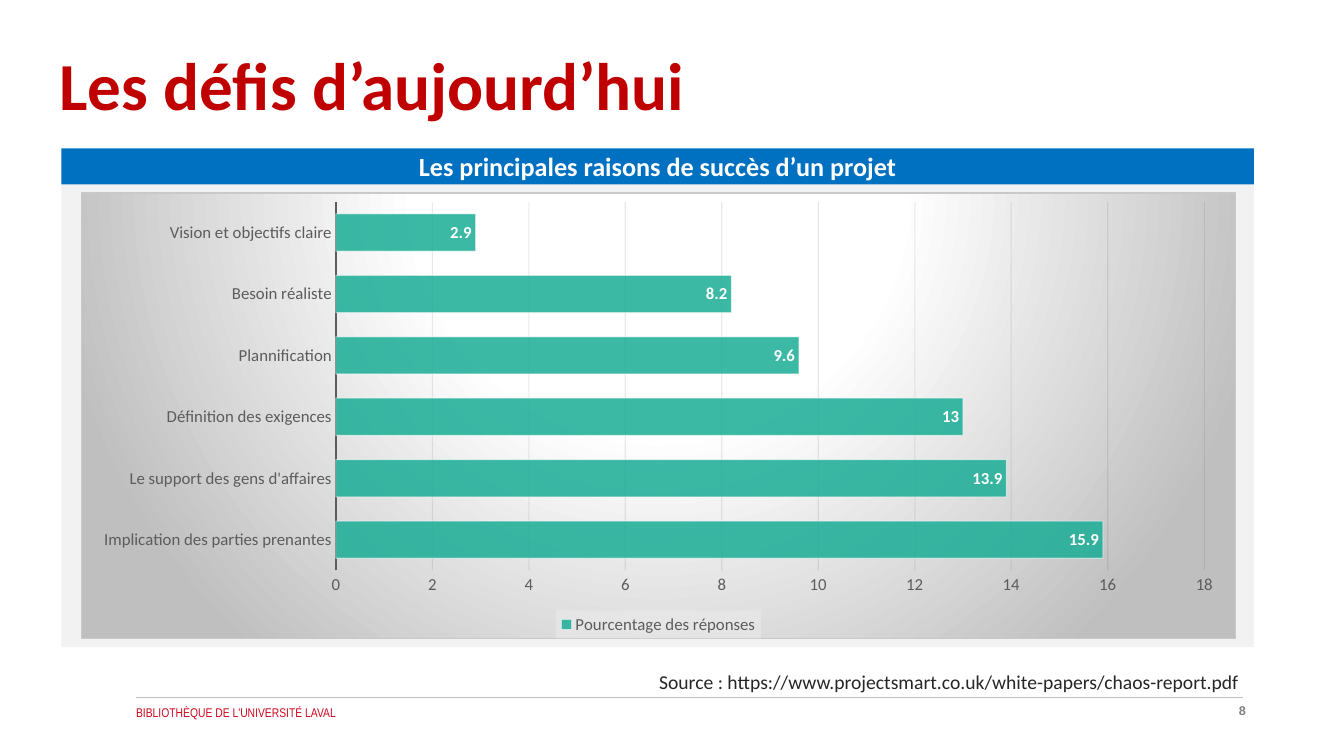
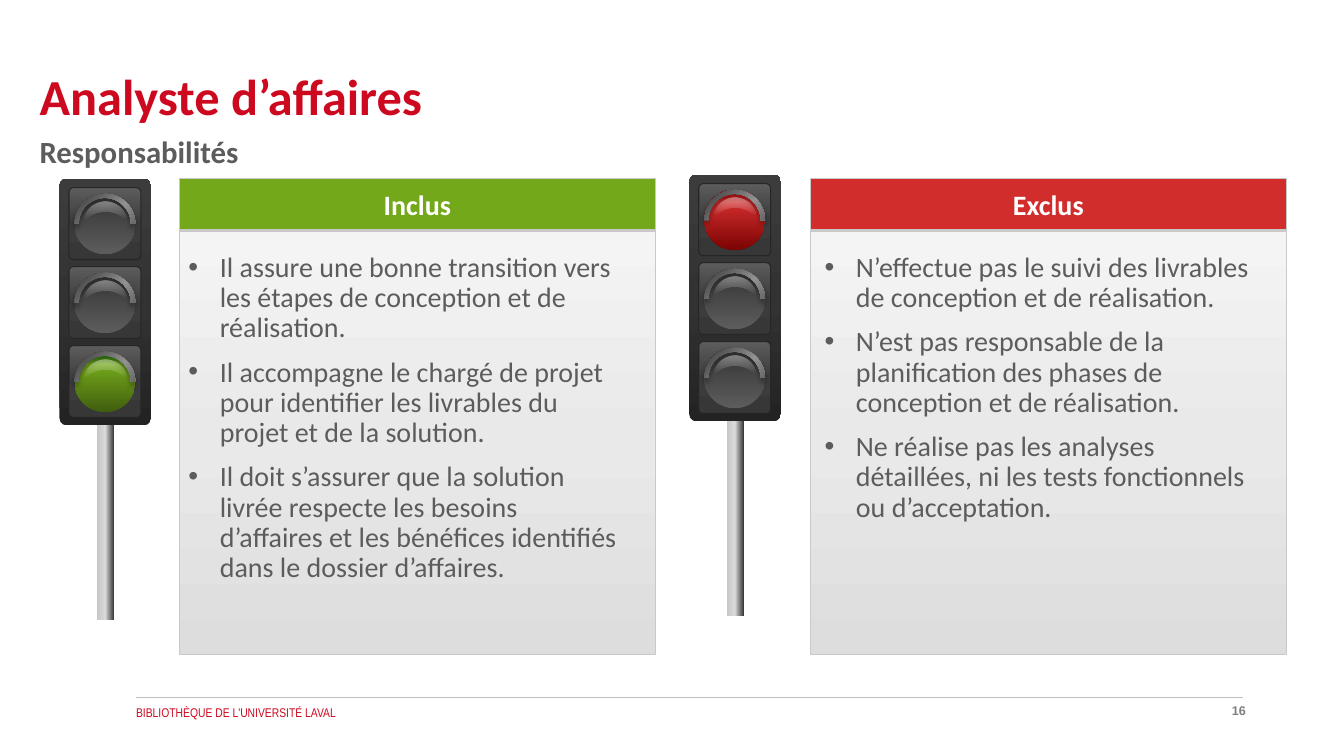
from lxml import etree
from pptx import Presentation
from pptx.chart.data import CategoryChartData
from pptx.dml.color import RGBColor
from pptx.enum.chart import XL_CHART_TYPE as ChartType, XL_LABEL_POSITION as LabelPos
from pptx.enum.chart import XL_LEGEND_POSITION as LegendPos, XL_TICK_MARK as Tick
from pptx.enum.shapes import MSO_CONNECTOR as Connector, MSO_SHAPE as Shape
from pptx.enum.text import MSO_ANCHOR as Anchor, MSO_AUTO_SIZE as AutoSize, PP_ALIGN as Align
from pptx.oxml import parse_xml
from pptx.oxml.ns import nsdecls, qn
from pptx.util import Cm, Pt

COLORS = {
    "crimson": "CD0920", "deep red": "C00000", "red": "D12D2D", "dark red": "7B0303",
    "green": "73A81B", "dark green": "405E0F", "forest": "006600",
    "blue": "0070C0", "teal": "1AAD96", "white": "FFFFFF", "pale": "F2F2F2",
    "ink": "262626", "text": "5C5C5C", "number": "808080", "rule": "BFBFBF",
    "border": "C9C9C9", "grid": "313131", "black": "000000",
    "panel low": "DDDDDD", "panel mid": "E9E9E9", "panel high": "F4F4F4",
    "pole left": "C6C5C5", "pole mid": "DBDADA", "shine": "929292",
    "case low": "232323", "case mid": "323232", "case high": "3C3C3C", "cell": "373737",
}

# Linear gradients: angle, then stops of position, colour and optional opacity
GRADIENTS = {
    "panel": (270, [(0, "panel low"), (50, "panel mid"), (100, "panel high")]),
    "pole": (0, [(0, "pole left"), (50, "pole mid"), (100, "case high")]),
    "case": (270, [(0, "case low"), (50, "case mid"), (100, "case high")]),
    "cell": (270, [(0, "cell"), (50, "case high"), (100, "text")]),
    "off": (270, [(0, "text"), (80, "case high"), (100, "case high")]),
    "red on": (270, [(0, "dark red"), (80, "red"), (100, "deep red")]),
    "green on": (270, [(0, "dark green"), (80, "green"), (100, "forest")]),
    "rim": (45, [(0, "cell"), (50, "shine"), (100, "case high")]),
    "gloss": (0, [(0, "white", 41), (86, "white", 0)]),
}

FOOTER = "BIBLIOTHÈQUE DE L'UNIVERSITÉ LAVAL"

SUCCESS = {
    "title": "Les défis d’aujourd’hui",
    "number": "8",
    "band": "Les principales raisons de succès d’un projet",
    "series": "Pourcentage des réponses",
    "values": [
        ("Implication des parties prenantes", 15.9),
        ("Le support des gens d'affaires", 13.9),
        ("Définition des exigences", 13),
        ("Plannification", 9.6),
        ("Besoin réaliste", 8.2),
        ("Vision et objectifs claire", 2.9),
    ],
    "source": "Source : https://www.projectsmart.co.uk/white-papers/chaos-report.pdf",
}

ANALYST = {
    "title": "Analyste d’affaires",
    "number": "16",
    "subtitle": "Responsabilités",
    "panels": [
        {"heading": "Inclus", "color": "green", "left": 4.52, "holder": 2, "list left": 4.75,
         "light": (1.5, 4.5), "lamps": ["off", "off", "green on"],
         "items": [
             "Il assure une bonne transition vers les étapes de conception et de réalisation.",
             "Il accompagne le chargé de projet pour identifier les livrables du projet "
             "et de la solution.",
             "Il doit s’assurer que la solution livrée respecte les besoins d’affaires et "
             "les bénéfices identifiés dans le dossier d’affaires.",
         ]},
        {"heading": "Exclus", "color": "red", "left": 20.42, "holder": 4, "list left": 20.78,
         "light": (17.37, 4.4), "lamps": ["red on", "off", "off"],
         "items": [
             "N’effectue pas le suivi des livrables de conception et de réalisation.",
             "N’est pas responsable de la planification des phases de conception "
             "et de réalisation.",
             "Ne réalise pas les analyses détaillées, ni les tests fonctionnels "
             "ou d’acceptation.",
         ]},
    ],
}


def rgb(name):
    return RGBColor.from_string(COLORS[name])


def cms(*lengths):
    return [Cm(length) for length in lengths]


def set_all(target, values):
    for name, value in values.items():
        setattr(target, name, value)


def set_font(font, size, color, bold=False, name="Calibri"):
    set_all(font, {"name": name, "size": Pt(size), "bold": bold})
    font.color.rgb = rgb(color)


def write(frame, lines, size, color, bold=False, name="Calibri", para_format=None,
          bullet=False, **frame_format):
    """Fill a text frame with one paragraph a line, all in one format."""
    set_all(frame, {"word_wrap": True, "auto_size": AutoSize.NONE, **frame_format})
    for index, line in enumerate(lines):
        para = frame.add_paragraph() if index else frame.paragraphs[0]
        if bullet:
            props = para._p.get_or_add_pPr()
            props.set("marL", str(Cm(0.79)))
            props.set("indent", str(Cm(-0.79)))
            etree.SubElement(props, qn("a:buFont"), typeface="Arial")
            etree.SubElement(props, qn("a:buChar"), char="•")
        set_all(para, {"space_before": Pt(0), "alignment": Align.LEFT, **(para_format or {})})
        span = para.add_run()
        span.text = line
        set_font(span.font, size, color, bold, name)


def fade(element, percent):
    """Make the colour inside an element partly transparent."""
    for color in element.iter(qn("a:srgbClr")):
        etree.SubElement(color, qn("a:alpha"), val=str(percent * 1000))


def gradient_xml(stops, direction):
    marks = ""
    for position, color, *opacity in stops:
        alpha = "".join(f'<a:alpha val="{value * 1000}"/>' for value in opacity)
        marks += (f'<a:gs pos="{position * 1000}"><a:srgbClr val="{COLORS[color]}">'
                  f'{alpha}</a:srgbClr></a:gs>')
    return (f'<a:gradFill {nsdecls("a")} rotWithShape="1"><a:gsLst>{marks}</a:gsLst>'
            f'{direction}</a:gradFill>')


def draw(shapes, kind, box, fill, line=None, width=0.75):
    """Add a preset shape whose fill is a gradient name or a colour name."""
    shape = shapes.add_shape(kind, *cms(*box))
    shape.shadow.inherit = False
    if fill in GRADIENTS:
        angle, stops = GRADIENTS[fill]
        shape.fill.background()
        props = shape._element.spPr
        direction = f'<a:lin ang="{angle * 60000}" scaled="0"/>'
        props.replace(props.find(qn("a:noFill")), parse_xml(gradient_xml(stops, direction)))
    else:
        shape.fill.solid()
        shape.fill.fore_color.rgb = rgb(fill)
    if line:
        shape.line.color.rgb = rgb(line)
        shape.line.width = Pt(width)
    else:
        shape.line.fill.background()
    return shape


def draw_band(shapes, box, text, size, fill, line=None):
    band = draw(shapes, Shape.RECTANGLE, box, fill, line, 1)
    write(band.text_frame, [text], size, "white", True, vertical_anchor=Anchor.MIDDLE,
          para_format={"alignment": Align.CENTER})


def fill_holder(holder, box, lines, size, color, bold=True, anchor=Anchor.MIDDLE, **options):
    set_all(holder, dict(zip(("left", "top", "width", "height"), cms(*box))))
    margins = {f"margin_{side}": 0 for side in ("left", "top", "right", "bottom")}
    write(holder.text_frame, lines, size, color, bold, vertical_anchor=anchor,
          **margins, **options)


def add_label(page, box, text, *font, **options):
    write(page.shapes.add_textbox(*cms(*box)).text_frame, [text], *font, **options)


def start_page(deck, layout, content, title_at, size, color):
    """Add a slide with its title, footer text, rule and number."""
    page = deck.slides.add_slide(deck.slide_layouts.get_by_name(layout))
    fill_holder(page.shapes.title, (*title_at, 31, 1.83), [content["title"]], size, color)
    add_label(page, (3.18, 17.65, 20.45, 0.64), FOOTER, 9, "crimson", False, "Arial Narrow")
    rule = page.shapes.add_connector(Connector.STRAIGHT, *cms(3.43, 17.58, 31.32, 17.58))
    rule.line.color.rgb = rgb("rule")
    rule.line.width = Pt(0.25)
    etree.SubElement(rule._element.spPr, qn("a:effectLst"))
    add_label(page, (28.12, 17.58, 3.53, 0.64), content["number"], 9, "number", True, "Arial",
              para_format={"alignment": Align.RIGHT})
    return page


def add_bar_chart(page, box, content):
    data = CategoryChartData()
    data.categories, values = zip(*content["values"])
    data.add_series(content["series"], values)
    chart = page.shapes.add_chart(ChartType.BAR_CLUSTERED, *cms(*box), data).chart
    set_font(chart.font, 10, "ink")
    set_all(chart, {"has_title": False, "has_legend": True})
    set_all(chart.legend, {"position": LegendPos.BOTTOM, "include_in_layout": False})
    set_font(chart.legend.font, 12, "text")

    names, scale = chart.category_axis, chart.value_axis
    for axis in (names, scale):
        set_all(axis, {"major_tick_mark": Tick.NONE, "minor_tick_mark": Tick.NONE})
        set_font(axis.tick_labels.font, 12, "text")
    names.format.line.color.rgb = rgb("text")
    names.format.line.width = Pt(1.5)
    set_all(scale, {"minimum_scale": 0, "maximum_scale": 18, "major_unit": 2,
                    "has_major_gridlines": True})
    scale.format.line.fill.background()
    grid = scale.major_gridlines.format.line
    grid.color.rgb = rgb("grid")
    grid.width = Pt(0.75)
    fade(scale.major_gridlines._xAx.find(qn("c:majorGridlines")), 10)

    plot = chart.plots[0]
    set_all(plot, {"gap_width": 65, "vary_by_categories": False, "has_data_labels": True})
    set_all(plot.data_labels, {"show_value": True, "position": LabelPos.INSIDE_END})
    set_font(plot.data_labels.font, 12, "white", True)
    bars = plot.series[0].format
    bars.fill.solid()
    bars.fill.fore_color.rgb = rgb("teal")
    props = plot.series[0]._element.find(qn("c:spPr"))
    fade(props, 85)
    bars.line.color.rgb = rgb("white")
    bars.line.width = Pt(0.75)
    fade(props.find(qn("a:ln")), 50)

    glow = gradient_xml(
        [(0, "white"), (39, "white"), (100, "rule")],
        '<a:path path="circle"><a:fillToRect l="50000" t="-80000" r="50000" b="180000"/></a:path>')
    chart._chartSpace.find(qn("c:chart")).addnext(parse_xml(
        f'<c:spPr {nsdecls("c", "a")}>{glow}<a:ln w="9525"><a:solidFill>'
        f'<a:srgbClr val="{COLORS["border"]}"/></a:solidFill></a:ln></c:spPr>'))
    chart.legend._element.find(qn("c:txPr")).addprevious(parse_xml(
        f'<c:spPr {nsdecls("c", "a")}><a:solidFill><a:srgbClr val="{COLORS["pale"]}">'
        '<a:alpha val="39000"/></a:srgbClr></a:solidFill></c:spPr>'))


def add_traffic_light(page, left, top, lamps):
    parts = page.shapes.add_group_shape().shapes
    draw(parts, Shape.RECTANGLE, (left + 0.94, top + 1.19, 0.43, 9.93), "pole")
    case = draw(parts, Shape.ROUNDED_RECTANGLE, (left, top, 2.31, 6.22), "case")
    case.adjustments[0] = 0.08
    for index, lamp in enumerate(lamps):
        y = top + index * 1.99
        cell = draw(parts, Shape.ROUNDED_RECTANGLE, (left + 0.24, y + 0.23, 1.81, 1.81),
                    "cell", "ink")
        cell.adjustments[0] = 0.06
        lens = (left + 0.38, y + 0.38, 1.53, 1.53)
        draw(parts, Shape.OVAL, lens, lamp)
        rim = draw(parts, Shape.BLOCK_ARC, lens, "rim")
        rim.adjustments[2] = 0.07
        rim._element.spPr.find(qn("a:effectLst")).append(parse_xml(
            f'<a:outerShdw {nsdecls("a")} blurRad="{Pt(4)}" dist="{Pt(3)}" dir="5400000">'
            f'<a:srgbClr val="{COLORS["black"]}"><a:alpha val="40000"/></a:srgbClr>'
            '</a:outerShdw>'))
        draw(parts, Shape.MOON, (left + 0.89, y + 0.3, 0.53, 1.09), "gloss").rotation = 90


def build_success(deck):
    page = start_page(deck, "Title Only", SUCCESS, (1.5, 1.19), 48, "deep red")
    frame = page.shapes.add_group_shape().shapes
    draw(frame, Shape.RECTANGLE, (1.55, 4.65, 30.05, 11.66), "pale")
    draw_band(frame, (1.55, 3.74, 30.05, 0.91), SUCCESS["band"], 18.7, "blue")
    add_bar_chart(page, (2.03, 4.85, 29.13, 11.25), SUCCESS)
    add_label(page, (16.36, 16.76, 15.27, 0.86), SUCCESS["source"], 14, "ink", word_wrap=False)


def build_analyst(deck):
    page = start_page(deck, "Comparison", ANALYST, (1, 1.5), 36, "crimson")
    holders = {holder.placeholder_format.idx: holder for holder in page.placeholders}
    fill_holder(holders[1], (1, 3.5, 31, 0.64), [ANALYST["subtitle"]], 22, "text")
    tree = page.shapes.element
    tree.remove(holders[3].element)
    for panel in ANALYST["panels"]:
        add_traffic_light(page, *panel["light"], panel["lamps"])
        parts = page.shapes.add_group_shape().shapes
        draw(parts, Shape.RECTANGLE, (panel["left"], 5.82, 12, 10.67), "panel", "border", 1)
        draw_band(parts, (panel["left"], 4.5, 12, 1.3), panel["heading"], 20,
                  panel["color"], "border")
        holder = holders[panel["holder"]]
        fill_holder(holder, (panel["list left"], 6.38, 11, 8.5), panel["items"], 20, "text",
                    False, Anchor.TOP, bullet=True,
                    para_format={"line_spacing": 0.9, "space_after": Pt(10)})
        tree.append(holder.element)


def main():
    deck = Presentation()
    set_all(deck, {"slide_width": Cm(33.87), "slide_height": Cm(19.05)})
    build_success(deck)
    build_analyst(deck)
    deck.save("out.pptx")


if __name__ == "__main__":
    main()
